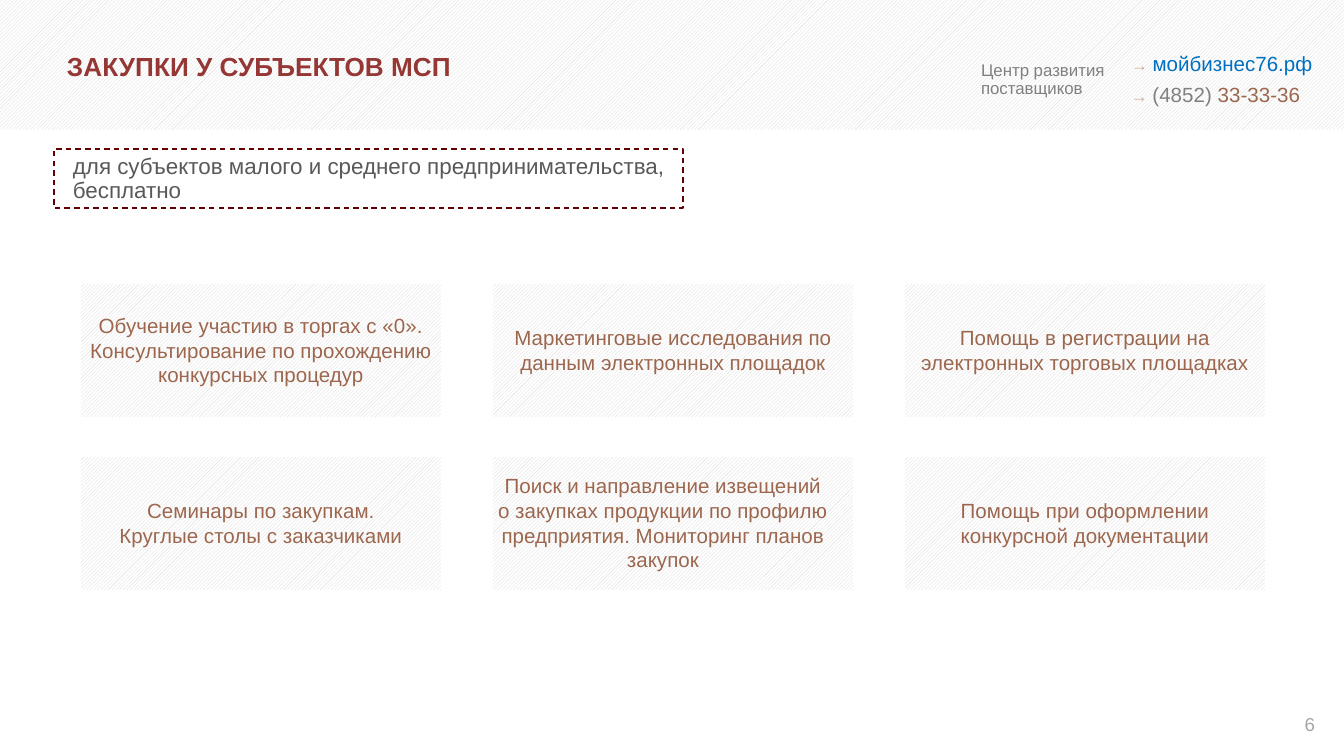
import pptx
import pptx.dml.color
import pptx.enum.dml
import pptx.enum.shapes
import pptx.enum.text
import pptx.util

PATTERN = pptx.enum.dml.MSO_PATTERN
ALIGN = pptx.enum.text.PP_ALIGN
ANCHOR = pptx.enum.text.MSO_ANCHOR

SLIDE_W, SLIDE_H = 1344, 756
EMU_PER_PX = 914400 * 10 / SLIDE_W
FONT = "Arial"
BROWN, GREY, ARROW = "9C674E", "808080", "CEAD9E"

TITLE = "ЗАКУПКИ У СУБЪЕКТОВ МСП"
AUDIENCE = "для субъектов малого и среднего предпринимательства, бесплатно"
CENTER_NAME = "Центр развития поставщиков"
PAGE = "6"

# Each contact: top, width, runs of (text, size, colour)
CONTACTS = [
    (44, 210, [("→ ", 9, ARROW), ("мойбизнес76.рф", 11, "0070C0")]),
    (75, 198, [("→ ", 9, ARROW), ("(4852) ", 11, GREY), ("33-33-36", 11, BROWN)]),
]

# Each service: text, text width, line count, shift from the card's centre
SERVICES = [
    [
        ("Обучение участию в торгах с «0». Консультирование по прохождению "
         "конкурсных процедур", 383, 3, 0),
        ("Маркетинговые исследования по данным электронных площадок", 348, 2, 0),
        ("Помощь в регистрации на электронных торговых площадках", 358, 2, 0),
    ],
    [
        ("Семинары по закупкам. Круглые столы с заказчиками", 329, 2, 0),
        ("Поиск и направление извещений о закупках продукции по профилю "
         "предприятия. Мониторинг планов закупок", 358, 4, -10),
        ("Помощь при оформлении конкурсной документации", 306, 2, 0),
    ],
]
CARD_LEFT, CARD_TOP, CARD_W, CARD_H = 81, 284, 360, 133
COLUMN_STEP, ROW_STEP = 412, 173
LINE_H, TEXT_PADDING = 25, 14


def px(length):
    return pptx.util.Emu(round(length * EMU_PER_PX))


def color(hex_value):
    return pptx.dml.color.RGBColor.from_string(hex_value)


def add_rect(slide, left, top, width, height):
    rect = slide.shapes.add_shape(
        pptx.enum.shapes.MSO_SHAPE.RECTANGLE, px(left), px(top), px(width), px(height))
    rect.shadow.inherit = False
    return rect


def add_hatched(slide, box, pattern):
    rect = add_rect(slide, *box)
    rect.fill.patterned()
    rect.fill.pattern = pattern
    rect.fill.fore_color.rgb = color("D8D8D8")
    rect.fill.back_color.rgb = color("FFFFFF")
    rect.line.fill.background()
    return rect


def write(shape, runs, align=ALIGN.LEFT, anchor=ANCHOR.TOP, insets=(13, 7),
          spacing=1.0, wrap=True, bold=False):
    """Fill the shape with one paragraph of (text, size, colour) runs."""
    frame = shape.text_frame
    frame.auto_size = pptx.enum.text.MSO_AUTO_SIZE.NONE
    frame.word_wrap = wrap
    frame.vertical_anchor = anchor
    frame.margin_left = frame.margin_right = px(insets[0])
    frame.margin_top = frame.margin_bottom = px(insets[1])
    paragraph = frame.paragraphs[0]
    paragraph.alignment = align
    paragraph.line_spacing = spacing
    for text, size, hex_value in runs:
        run = paragraph.add_run()
        run.text = text
        run.font.name = FONT
        run.font.size = pptx.util.Pt(size)
        run.font.bold = bold
        run.font.color.rgb = color(hex_value)


def add_text(slide, box, runs, **layout):
    write(slide.shapes.add_textbox(*map(px, box)), runs, **layout)


def add_header(slide):
    header = add_hatched(slide, (0, -4, SLIDE_W, 134), PATTERN.DARK_UPWARD_DIAGONAL)
    title = slide.shapes.title
    title.element.addprevious(header.element)
    title.left, title.top, title.width, title.height = map(px, (58, 46, 469, 41))
    write(title, [(TITLE, 14, "953735")], anchor=ANCHOR.MIDDLE, insets=(9, 4), bold=True)
    add_text(slide, (968, 55, 157, 50), [(CENTER_NAME, 9, GREY)], spacing=0.9)
    for top, width, runs in CONTACTS:
        add_text(slide, (1118, top, width, 39), runs, wrap=False)


def add_audience(slide):
    add_text(slide, (58, 150, 625, 58), [(AUDIENCE, 12, "595959")],
             anchor=ANCHOR.MIDDLE, insets=(15, 8), spacing=0.9)
    border = add_rect(slide, 54, 149, 629, 59)
    border.fill.background()
    border.line.color.rgb = color("600000")
    border.line.width = pptx.util.Pt(0.75)
    border.line.dash_style = pptx.enum.dml.MSO_LINE.DASH


def add_services(slide):
    for row, services in enumerate(SERVICES):
        for column, (text, width, lines, shift) in enumerate(services):
            left = CARD_LEFT + column * COLUMN_STEP
            top = CARD_TOP + row * ROW_STEP
            add_hatched(slide, (left, top, CARD_W, CARD_H), PATTERN.LIGHT_UPWARD_DIAGONAL)
            height = lines * LINE_H + TEXT_PADDING
            text_box = (left + (CARD_W - width) / 2 + shift,
                        top + (CARD_H - height) / 2, width, height)
            add_text(slide, text_box, [(text, 11, BROWN)], align=ALIGN.CENTER)


def main():
    deck = pptx.Presentation()
    deck.slide_width, deck.slide_height = px(SLIDE_W), px(SLIDE_H)
    slide = deck.slides.add_slide(deck.slide_layouts[5])
    add_header(slide)
    add_audience(slide)
    add_services(slide)
    add_text(slide, (1243, 704, 85, 40), [(PAGE, 10, "A6A6A6")],
             align=ALIGN.RIGHT, anchor=ANCHOR.MIDDLE)
    deck.save("out.pptx")


if __name__ == "__main__":
    main()
